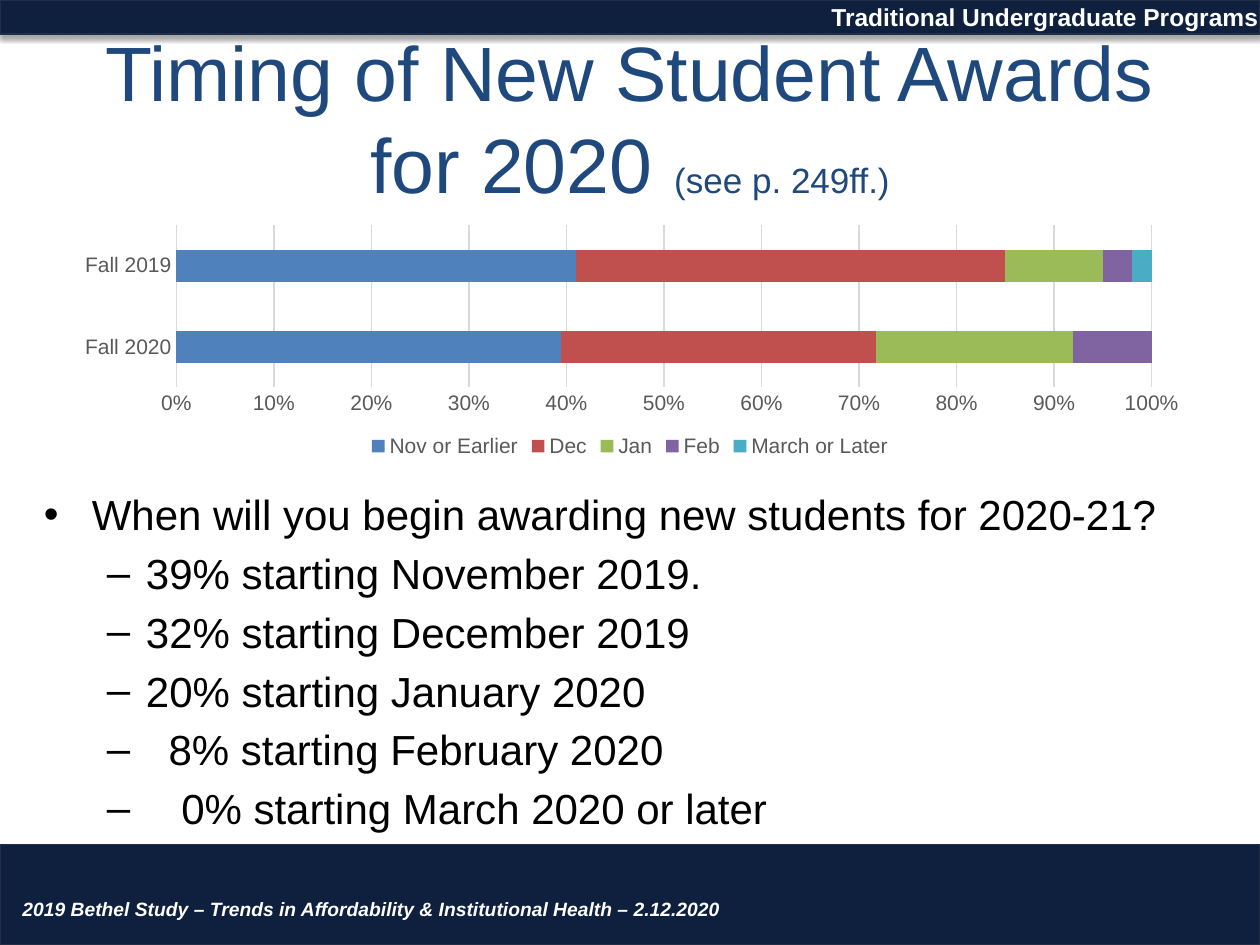
from dataclasses import dataclass
from lxml import etree
from pptx import Presentation
from pptx.chart.data import CategoryChartData as ChartData
from pptx.dml.color import RGBColor as RGB
from pptx.enum.chart import XL_CHART_TYPE as Kind, XL_LEGEND_POSITION as Spot, XL_TICK_MARK as Tick
from pptx.enum.shapes import MSO_SHAPE as Form
from pptx.enum.text import MSO_ANCHOR as Anchor, MSO_AUTO_SIZE as Fit, PP_ALIGN as Align
from pptx.oxml import parse_xml
from pptx.oxml.ns import nsdecls, qn
from pptx.util import Inches, Pt


@dataclass(frozen=True)
class Theme:
    font: str = "Arial"
    navy: str = "0E203E"
    edge: str = "222D46"
    title: str = "1F497D"
    ink: str = "000000"
    white: str = "FFFFFF"
    label: str = "595959"
    grid: str = "D9D9D9"
    bars: tuple = ("4F81BD", "C0504D", "9BBB59", "8064A2", "4BACC6")
    head: int = 44
    note: int = 20
    body: int = 24
    tag: int = 14
    foot: int = 11
    axis: int = 12


T = Theme()
CATS = ("Fall 2020", "Fall 2019")
SERIES = {
    "Nov or Earlier": (39, 41),
    "Dec": (32, 44),
    "Jan": (20, 10),
    "Feb": (8, 3),
    "March or Later": (0, 2),
}
ASK = "When will you begin awarding new students for 2020-21?"
STARTS = (
    ("39% starting November 2019.", 0),
    ("32% starting December 2019", 0),
    ("20% starting January 2020", 0),
    ("8% starting February 2020", 0.18),
    ("0% starting March 2020 or later", 0.28),
)


def style(font, size, color, bold=False, italic=False):
    font.name, font.size = T.font, Pt(size)
    font.bold, font.italic = bold, italic
    font.color.rgb = RGB.from_string(color)


def inches(box):
    return [Inches(v) for v in box]


def add_band(slide, box):
    band = slide.shapes.add_shape(Form.RECTANGLE, *inches(box))
    band.fill.solid()
    band.fill.fore_color.rgb = RGB.from_string(T.navy)
    band.line.color.rgb = RGB.from_string(T.edge)
    band.line.width = Pt(0.75)
    band.shadow.inherit = False
    glow = band.element.spPr.find(qn("a:effectLst"))
    glow.append(parse_xml(
        f'<a:outerShdw {nsdecls("a")} blurRad="{Pt(3.1)}" dist="{Pt(1.8)}" dir="5400000" '
        'rotWithShape="0"><a:srgbClr val="000000"><a:alpha val="35000"/></a:srgbClr></a:outerShdw>'))


def add_text(slide, box, text, size, **look):
    frame = slide.shapes.add_textbox(*inches(box)).text_frame
    frame.word_wrap = True
    frame.vertical_anchor = Anchor.MIDDLE
    frame.margin_top = frame.margin_bottom = frame.margin_right = 0
    frame.text = text
    style(frame.paragraphs[0].runs[0].font, size, T.white, **look)


def add_title(slide, box):
    shape = slide.shapes.title
    shape.left, shape.top, shape.width, shape.height = inches(box)
    frame = shape.text_frame
    frame.auto_size = Fit.NONE
    frame.vertical_anchor = Anchor.MIDDLE
    para = frame.paragraphs[0]
    para.alignment = Align.CENTER
    parts = (("Timing of New Student Awards for 2020 ", T.head), ("(see p. 249ff.)", T.note))
    for text, size in parts:
        run = para.add_run()
        run.text = text
        style(run.font, size, T.title)


def set_plot(chart, **place):
    area = chart.plots[0]._element.getparent()
    for old in area.findall(qn("c:layout")):
        area.remove(old)
    lay = etree.Element(qn("c:layout"))
    man = etree.SubElement(lay, qn("c:manualLayout"))
    modes = {"layoutTarget": "inner", "xMode": "edge", "yMode": "edge"}
    for key, val in {**modes, **place}.items():
        etree.SubElement(man, qn(f"c:{key}")).set("val", str(val))
    area.insert(0, lay)


def add_bars(slide, box):
    data = ChartData()
    data.categories = CATS
    for name, vals in SERIES.items():
        data.add_series(name, vals)
    chart = slide.shapes.add_chart(Kind.BAR_STACKED_100, *inches(box), data).chart
    style(chart.font, T.axis, T.label)
    chart.has_title = False
    chart.has_legend = True
    chart.legend.position = Spot.BOTTOM
    chart.legend.include_in_layout = False
    style(chart.legend.font, T.axis, T.label)
    plot = chart.plots[0]
    plot.gap_width, plot.overlap = 150, 100
    plot.vary_by_categories = False
    for row, color in zip(plot.series, T.bars):
        row.format.fill.solid()
        row.format.fill.fore_color.rgb = RGB.from_string(color)
    cat, val = chart.category_axis, chart.value_axis
    for axis in (cat, val):
        axis.major_tick_mark = axis.minor_tick_mark = Tick.NONE
        style(axis.tick_labels.font, T.axis, T.label)
    val.has_major_gridlines = True
    for line in (cat.format.line, val.major_gridlines.format.line):
        line.color.rgb = RGB.from_string(T.grid)
        line.width = Pt(0.75)
    val.format.line.fill.background()
    val.maximum_scale, val.major_unit = 1, 0.1
    val.tick_labels.number_format = "0%"
    val.tick_labels.number_format_is_linked = False
    set_plot(chart, x=0.1, y=0.02, w=0.86, h=0.67)


def add_point(para, text, mark, left, hang, level=0):
    para.text = text
    para.level = level
    props = para._p.get_or_add_pPr()
    props.set("marL", str(Inches(left)))
    props.set("indent", str(-Inches(hang)))
    etree.SubElement(props, qn("a:buFont")).set("typeface", T.font)
    etree.SubElement(props, qn("a:buChar")).set("char", mark)
    style(para.runs[0].font, T.body, T.ink)


def add_list(slide, box):
    frame = slide.shapes.add_textbox(*inches(box)).text_frame
    frame.word_wrap = True
    add_point(frame.paragraphs[0], ASK, "•", 0.38, 0.38)
    for text, shift in STARTS:
        para = frame.add_paragraph()
        para.space_before = Pt(0.2 * T.body)
        add_point(para, text, "–", 0.81 + shift, 0.31 + shift, 1)


def main():
    deck = Presentation()
    deck.slide_width, deck.slide_height = Inches(10), Inches(7.5)
    slide = deck.slides.add_slide(deck.slide_layouts[5])
    add_band(slide, (0, 0, 10, 0.27))
    add_band(slide, (0, 6.7, 10, 0.8))
    add_title(slide, (0.5, 0.3, 9, 1.25))
    add_bars(slide, (0.5, 1.75, 9, 1.92))
    add_list(slide, (0.25, 3.83, 9.58, 2.87))
    add_text(slide, (0.08, 7.08, 7.33, 0.27),
             "2019 Bethel Study – Trends in Affordability & Institutional Health – 2.12.2020",
             T.foot, bold=True, italic=True)
    add_text(slide, (6.5, 0, 3.5, 0.27), "Traditional Undergraduate Programs", T.tag, bold=True)
    deck.save("out.pptx")


if __name__ == "__main__":
    main()
